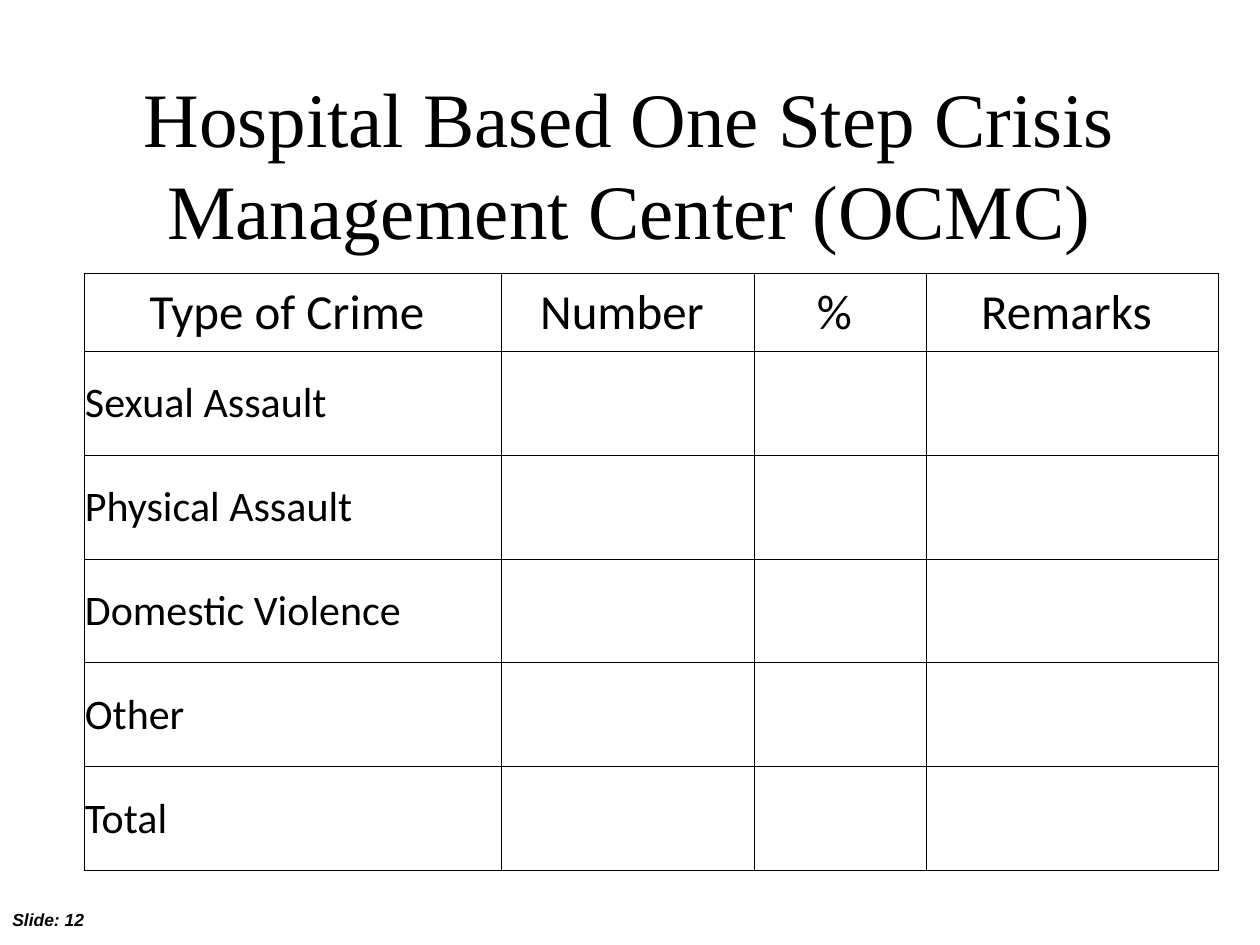
"""Build the OCMC crime summary slide with its blank table."""
import pptx
import pptx.util
import pptx.dml.color
import pptx.enum.text
import pptx.oxml
import pptx.oxml.ns

PX = 914400 // 126
BLACK = pptx.dml.color.RGBColor(0, 0, 0)
ALIGN = pptx.enum.text.PP_ALIGN
MIDDLE = pptx.enum.text.MSO_ANCHOR.MIDDLE
WIDTHS = [417, 253, 172, 292]
HEIGHTS = [78] + [104] * 5
HEADS = ["Type of Crime ", "Number ", "% ", "Remarks "]
CRIMES = ["Sexual Assault", "Physical Assault", "Domestic Violence", "Other", "Total"]


def write(frame, text, font, size, align=ALIGN.LEFT):
    para = frame.paragraphs[0]
    para.alignment = align
    run = para.add_run()
    run.text = text
    run.font.name = font
    run.font.size = pptx.util.Pt(size)
    run.font.color.rgb = BLACK
    return run


def border(cell):
    props = cell._tc.get_or_add_tcPr()
    for spot, side in enumerate(("lnL", "lnR", "lnT", "lnB")):
        line = pptx.oxml.parse_xml(
            f'<a:{side} {pptx.oxml.ns.nsdecls("a")} w="6350"><a:solidFill>'
            f'<a:srgbClr val="{BLACK}"/></a:solidFill></a:{side}>')
        props.insert(spot, line)


deck = pptx.Presentation()
deck.slide_width = 1260 * PX
deck.slide_height = 945 * PX
slide = deck.slides.add_slide(deck.slide_layouts[6])

foot = slide.shapes.add_textbox(0, 903 * PX, 116 * PX, 34 * PX).text_frame
foot.word_wrap = True
label = write(foot, "Slide: 12", "Arial", 10)
label.font.bold = True
label.font.italic = True

title = slide.shapes.add_textbox(94 * PX, 84 * PX, 1071 * PX, 158 * PX).text_frame
title.word_wrap = True
title.vertical_anchor = MIDDLE
write(title, "Hospital Based One Step Crisis Management Center (OCMC)",
      "Times New Roman", 44, ALIGN.CENTER)

table = slide.shapes.add_table(
    len(HEIGHTS), len(WIDTHS), 84 * PX, 273 * PX,
    sum(WIDTHS) * PX, sum(HEIGHTS) * PX).table
table.first_row = False
table.horz_banding = False
for col, width in zip(table.columns, WIDTHS):
    col.width = width * PX
for row, height in zip(table.rows, HEIGHTS):
    row.height = height * PX
for cell in table.iter_cells():
    cell.fill.background()
    cell.vertical_anchor = MIDDLE
    cell.margin_left = cell.margin_right = cell.margin_top = PX
    cell.margin_bottom = 0
    border(cell)
for col, head in enumerate(HEADS):
    write(table.cell(0, col).text_frame, head, "Calibri", 28, ALIGN.CENTER)
for row, crime in enumerate(CRIMES, 1):
    write(table.cell(row, 0).text_frame, crime, "Calibri", 24)

deck.save("out.pptx")
